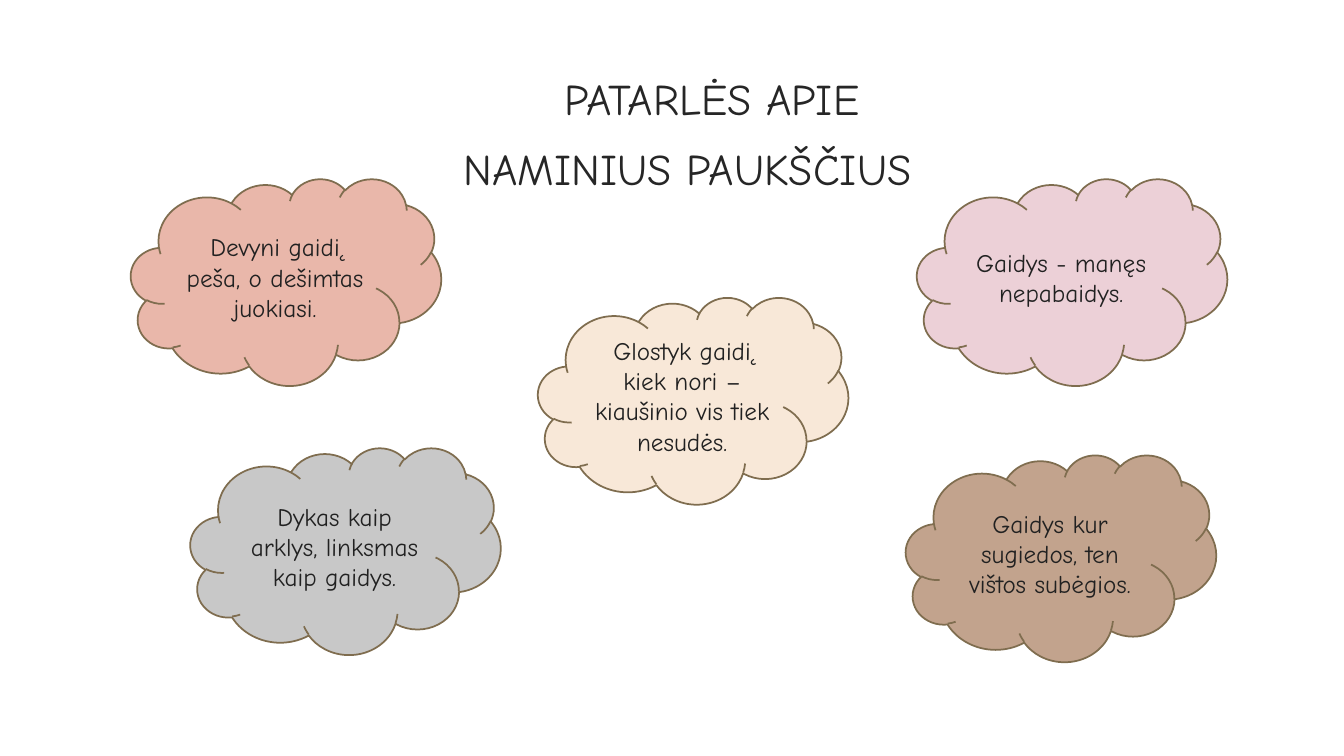
from dataclasses import dataclass

from pptx import Presentation
from pptx import util as u
from pptx.dml.color import RGBColor
from pptx.enum import shapes, text


@dataclass(frozen=True)
class Theme:
    font: str = "Comic Neue"
    title_size: float = 31.2
    cloud_size: float = 18
    title_color: str = "262626"
    cloud_text: str = "212121"
    outline: str = "7F6D4F"
    pink: str = "ECD0D7"
    brown: str = "C2A38D"
    coral: str = "E9B7AA"
    cream: str = "F8E8D8"
    grey: str = "C8C8C8"


THEME = Theme()
CLOUD_WIDTH, CLOUD_HEIGHT = u.Cm(7.82), u.Cm(5.21)

# Title lines with their left indents in centimetres
TITLE_LINES = [("PATARLĖS APIE", 2.83), ("NAMINIUS PAUKŠČIUS", 0.3)]

# Proverb, left and top in centimetres, fill
PROVERBS = [
    ("Gaidys - manęs nepabaidys.", 23.11, 4.5, THEME.pink),
    ("Gaidys kur sugiedos, ten vištos subėgios.", 22.83, 11.46, THEME.brown),
    ("Devyni gaidį peša, o dešimtas juokiasi.", 3.3, 4.5, THEME.coral),
    ("Glostyk gaidį kiek nori – kiaušinio vis tiek nesudės.", 13.56, 7.49, THEME.cream),
    ("Dykas kaip arklys, linksmas kaip gaidys.", 4.8, 11.28, THEME.grey),
]


def format_runs(paragraph, size, color):
    for run in paragraph.runs:
        run.font.name = THEME.font
        run.font.size = u.Pt(size)
        run.font.color.rgb = RGBColor.from_string(color)


def set_title(slide):
    title = slide.shapes.title
    title.left, title.top = u.Cm(11.13), u.Cm(0.25)
    title.width, title.height = u.Cm(15.19), u.Cm(4.42)
    frame = title.text_frame
    frame.text = "\n".join(line for line, _ in TITLE_LINES)
    frame.auto_size = text.MSO_AUTO_SIZE.NONE
    frame.vertical_anchor = text.MSO_ANCHOR.TOP
    frame.margin_top = u.Cm(1.57)
    for index, (paragraph, (_, indent)) in enumerate(zip(frame.paragraphs, TITLE_LINES)):
        paragraph.alignment = text.PP_ALIGN.LEFT
        paragraph.space_before = u.Pt(6 if index else 0)
        paragraph.space_after = u.Pt(6)
        properties = paragraph._p.get_or_add_pPr()
        properties.set("marL", str(u.Cm(indent)))
        properties.set("indent", "0")
        format_runs(paragraph, THEME.title_size, THEME.title_color)


def add_cloud(slide, proverb, left, top, fill):
    cloud = slide.shapes.add_shape(
        shapes.MSO_SHAPE.CLOUD, u.Cm(left), u.Cm(top), CLOUD_WIDTH, CLOUD_HEIGHT)
    cloud.shadow.inherit = False
    cloud.fill.solid()
    cloud.fill.fore_color.rgb = RGBColor.from_string(fill)
    cloud.line.color.rgb = RGBColor.from_string(THEME.outline)
    cloud.line.width = u.Pt(1.25)
    frame = cloud.text_frame
    frame.text = proverb
    frame.word_wrap = True
    frame.vertical_anchor = text.MSO_ANCHOR.MIDDLE
    paragraph = frame.paragraphs[0]
    paragraph.alignment = text.PP_ALIGN.CENTER
    format_runs(paragraph, THEME.cloud_size, THEME.cloud_text)


def main():
    presentation = Presentation()
    presentation.slide_width, presentation.slide_height = u.Cm(33.87), u.Cm(19.05)
    # Title-only layout
    slide = presentation.slides.add_slide(presentation.slide_layouts[5])
    set_title(slide)
    # Proverb clouds
    for proverb in PROVERBS:
        add_cloud(slide, *proverb)
    presentation.save("out.pptx")


if __name__ == "__main__":
    main()
